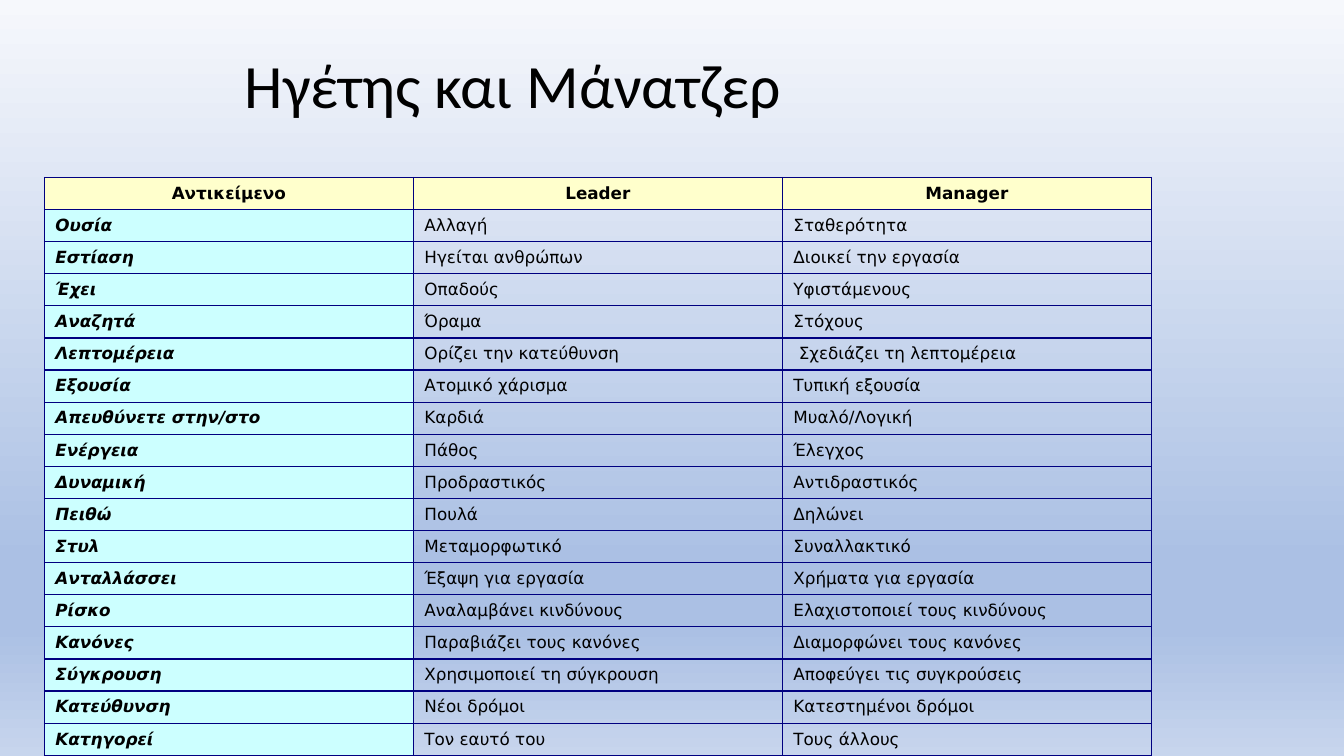
from copy import deepcopy

from pptx import Presentation
from pptx.dml.color import RGBColor
from pptx.enum.text import MSO_ANCHOR, PP_ALIGN
from pptx.oxml.ns import qn
from pptx.util import Inches, Pt
from lxml.etree import SubElement

BLACK = RGBColor(0x00, 0x00, 0x00)
NAVY = RGBColor(0x00, 0x00, 0x80)
CREAM = RGBColor(0xFF, 0xFF, 0xCC)
AQUA = RGBColor(0xCC, 0xFF, 0xFF)
SKY = [
    (0, RGBColor(0xF6, 0xF8, 0xFC)),
    (0.74, RGBColor(0xAB, 0xC0, 0xE4)),
    (0.83, RGBColor(0xAB, 0xC0, 0xE4)),
    (1, RGBColor(0xC7, 0xD5, 0xED)),
]

ROWS = [
    ("Αντικείμενο", "Leader", "Manager"),
    ("Ουσία", "Αλλαγή", "Σταθερότητα"),
    ("Εστίαση", "Ηγείται ανθρώπων", "Διοικεί την εργασία"),
    ("Έχει", "Οπαδούς", "Υφιστάμενους"),
    ("Αναζητά", "Όραμα", "Στόχους"),
    ("Λεπτομέρεια", "Ορίζει την κατεύθυνση", " Σχεδιάζει τη λεπτομέρεια"),
    ("Εξουσία", "Ατομικό χάρισμα", "Τυπική εξουσία"),
    ("Απευθύνετε στην/στο", "Καρδιά", "Μυαλό/Λογική"),
    ("Ενέργεια", "Πάθος", "Έλεγχος"),
    ("Δυναμική", "Προδραστικός", "Αντιδραστικός"),
    ("Πειθώ", "Πουλά", "Δηλώνει"),
    ("Στυλ", "Μεταμορφωτικό", "Συναλλακτικό"),
    ("Ανταλλάσσει", "Έξαψη για εργασία", "Χρήματα για εργασία"),
    ("Ρίσκο", "Αναλαμβάνει κινδύνους", "Ελαχιστοποιεί τους κινδύνους"),
    ("Κανόνες", "Παραβιάζει τους κανόνες", "Διαμορφώνει τους κανόνες"),
    ("Σύγκρουση", "Χρησιμοποιεί τη σύγκρουση", "Αποφεύγει τις συγκρούσεις"),
    ("Κατεύθυνση", "Νέοι δρόμοι", "Κατεστημένοι δρόμοι"),
    ("Κατηγορεί", "Τον εαυτό του", "Τους άλλους"),
]


def paint_background(s, stops):
    fill = s.background.fill
    fill.gradient()
    fill.gradient_angle = 270
    gs_list = s._element.find(".//" + qn("a:gsLst"))
    while len(gs_list) < len(stops):
        gs_list.append(deepcopy(gs_list[0]))
    for stop, (position, color) in zip(fill.gradient_stops, stops):
        stop.position = position
        stop.color.rgb = color


def add_run(p, text, font, size, bold=False, italic=False):
    r = p.add_run()
    r.text = text
    r.font.name = font
    r.font.size = Pt(size)
    r.font.bold = bold
    r.font.italic = italic
    r.font.color.rgb = BLACK


def add_title(s, text):
    sp = s.shapes.add_textbox(Inches(2.33), Inches(0.42), Inches(10.44), Inches(0.92))
    tf = sp.text_frame
    tf.word_wrap = True
    tf.vertical_anchor = MSO_ANCHOR.MIDDLE
    p = tf.paragraphs[0]
    p.line_spacing = 0.9
    add_run(p, text, "Calibri", 44)


def add_borders(cell):
    tc_pr = cell._tc.get_or_add_tcPr()
    for side in ("a:lnL", "a:lnR", "a:lnT", "a:lnB"):
        ln = SubElement(tc_pr, qn(side), w=str(Pt(1)))
        fill = SubElement(ln, qn("a:solidFill"))
        SubElement(fill, qn("a:srgbClr"), val=str(NAVY))


def fill_cell(cell, text, fill=None, bold=False, italic=False, align=PP_ALIGN.LEFT):
    add_borders(cell)
    if fill is None:
        cell.fill.background()
    else:
        cell.fill.solid()
        cell.fill.fore_color.rgb = fill
    cell.margin_left = cell.margin_right = Inches(0.11)
    cell.margin_top = cell.margin_bottom = Inches(0.05)
    cell.vertical_anchor = MSO_ANCHOR.MIDDLE
    p = cell.text_frame.paragraphs[0]
    p.alignment = align
    p_pr = p._p.get_or_add_pPr()
    p_pr.set("marL", str(Inches(0.38)))
    p_pr.set("indent", str(-Inches(0.38)))
    add_run(p, text, "DejaVu Sans", 12, bold, italic)


def add_comparison(s, rows):
    table = s.shapes.add_table(
        len(rows), len(rows[0]), Inches(0.44), Inches(1.76), Inches(10.98), Inches(5.74)
    ).table
    table.first_row = False
    table.horz_banding = False
    for i, row in enumerate(rows):
        for j, text in enumerate(row):
            cell = table.cell(i, j)
            if i == 0:
                fill_cell(cell, text, CREAM, bold=True, align=PP_ALIGN.CENTER)
            elif j == 0:
                fill_cell(cell, text, AQUA, bold=True, italic=True)
            else:
                fill_cell(cell, text)


def main():
    prs = Presentation()
    prs.slide_width = Inches(13.33)
    prs.slide_height = Inches(7.5)
    s = prs.slides.add_slide(prs.slide_layouts[6])
    paint_background(s, SKY)
    add_title(s, "Ηγέτης και Μάνατζερ")
    add_comparison(s, ROWS)
    prs.save("out.pptx")


if __name__ == "__main__":
    main()
